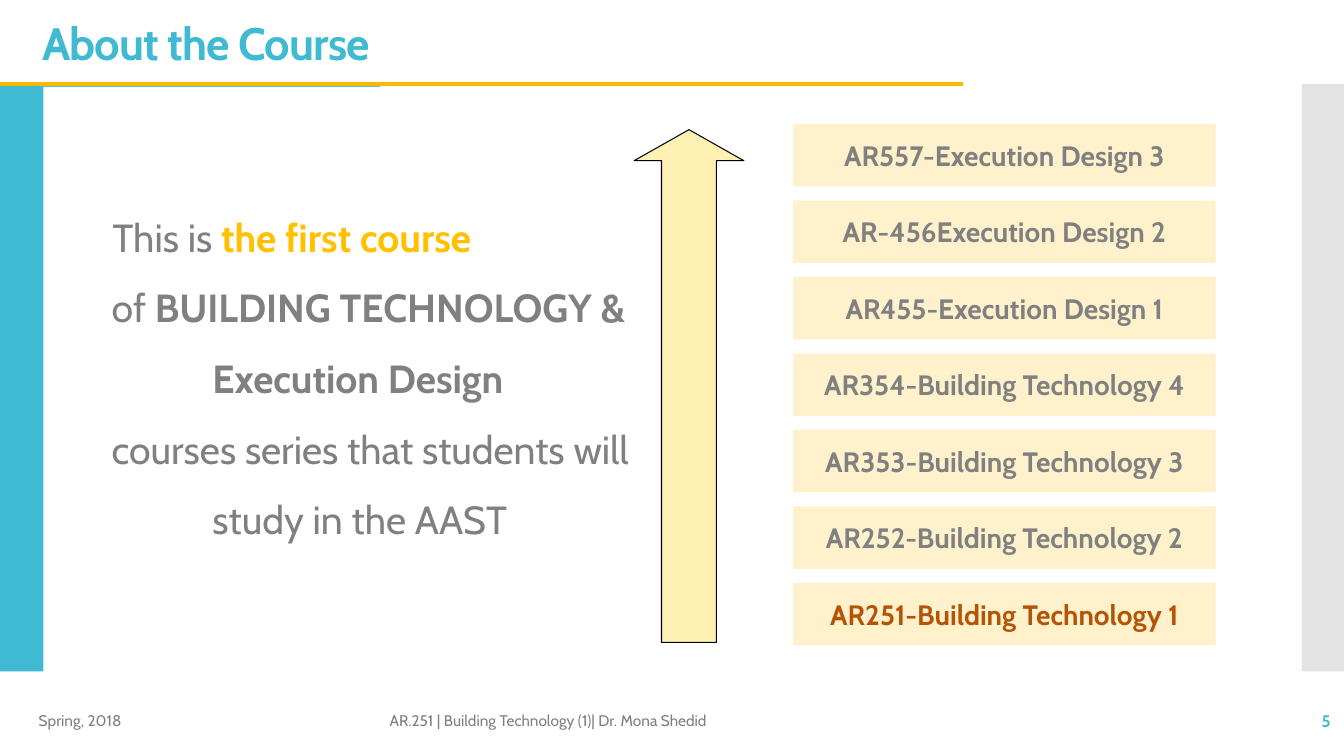
import pptx
import pptx.util
import pptx.dml.color
import pptx.enum.shapes
import pptx.enum.text
import pptx.oxml
import pptx.oxml.ns

Pt = pptx.util.Pt
Shape = pptx.enum.shapes.MSO_SHAPE
Align = pptx.enum.text.PP_ALIGN
Anchor = pptx.enum.text.MSO_ANCHOR
qn = pptx.oxml.ns.qn

TEAL, GOLD, GREY, WHITE = "40BAD2", "FAB900", "808080", "FFFFFF"
AMBER, CREAM, RUST = "FFC000", "FFF1CB", "B35406"


def color(code):
    return pptx.dml.color.RGBColor.from_string(code)


def child(node, tag, **attrs):
    item = pptx.oxml.parse_xml(
        '<a:%s xmlns:a="http://schemas.openxmlformats.org/drawingml/2006/main"/>' % tag)
    for key, value in attrs.items():
        item.set(key, value)
    node.append(item)


class Board:
    def __init__(self, slide, font):
        self.slide = slide
        self.font = font

    def run(self, para, text, size, ink, bold=False):
        run = para.add_run()
        run.text = text
        run.font.name = self.font
        run.font.size = Pt(size)
        run.font.bold = bold
        run.font.color.rgb = color(ink)
        return run

    def title(self, box, text, size, ink):
        shape = self.slide.shapes.title
        shape.left, shape.top, shape.width, shape.height = map(Pt, box)
        frame = shape.text_frame
        frame.vertical_anchor = Anchor.MIDDLE
        para = frame.paragraphs[0]
        para.alignment = Align.LEFT
        para.line_spacing = 0.9
        run = self.run(para, text, size, ink, True)
        run.font._element.set("spc", "-60")

    def shape(self, kind, box, fill, line=None, alpha=None):
        shape = self.slide.shapes.add_shape(kind, *map(Pt, box))
        shape.shadow.inherit = False
        shape.fill.solid()
        shape.fill.fore_color.rgb = color(fill)
        if alpha:
            tint = shape._element.spPr.find(qn("a:solidFill"))[0]
            child(tint, "alpha", val=str(alpha * 1000))
        if line:
            shape.line.color.rgb = color(line)
            shape.line.width = Pt(0.75)
        else:
            shape.line.fill.background()
        return shape

    def label(self, box, text, size, ink, bold=False, fill=CREAM):
        shape = self.shape(Shape.RECTANGLE, box, fill)
        frame = shape.text_frame
        frame.vertical_anchor = Anchor.MIDDLE
        para = frame.paragraphs[0]
        para.alignment = Align.CENTER
        self.run(para, text, size, ink, bold)

    def rule(self, start, end, ink, width):
        line = self.slide.shapes.add_connector(
            pptx.enum.shapes.MSO_CONNECTOR.STRAIGHT, *map(Pt, start + end))
        line.line.color.rgb = color(ink)
        line.line.width = Pt(width)
        child(line._element.spPr, "effectLst")

    def text(self, box, paras, size, align=Align.LEFT, anchor=Anchor.MIDDLE,
             space=None):
        """Each paragraph is (left margin, first indent, runs)."""
        frame = self.slide.shapes.add_textbox(*map(Pt, box)).text_frame
        frame.word_wrap = True
        frame.vertical_anchor = anchor
        for index, (left, first, runs) in enumerate(paras):
            para = frame.add_paragraph() if index else frame.paragraphs[0]
            para.alignment = align
            if space:
                para.line_spacing = space
            if left:
                props = para._p.get_or_add_pPr()
                props.set("marL", str(Pt(left)))
                props.set("indent", str(Pt(first)))
            for words, ink, bold in runs:
                self.run(para, words, size, ink, bold)


def main():
    deck = pptx.Presentation()
    deck.slide_width, deck.slide_height = Pt(960), Pt(540)
    board = Board(deck.slides.add_slide(deck.slide_layouts[5]), "Cabin")

    # Side bands and header rule
    board.shape(Shape.RECTANGLE, (0, 60, 271.5, 419.5), TEAL)
    board.shape(Shape.RECTANGLE, (930, 60, 30, 419.5), "C8C8C8", alpha=50)
    board.rule((0, 60), (688, 60), GOLD, 3)
    board.shape(Shape.RECTANGLE, (31, 62, 260.5, 420), WHITE)

    # Title
    board.title((23, 12.2, 318, 41), "About the Course", 32.4, TEAL)

    # Footer
    foot, tall = 500.4, 28.8
    board.text((837.5, foot, 120, tall), [(0, 0, [("5", TEAL, True)])], 12,
               Align.RIGHT)
    for left, width, words in (
            (20.6, 216, "Spring, 2018"),
            (271.2, 543.6, "AR.251 | Building Technology (1)| Dr. Mona Shedid")):
        board.text((left, foot, width, tall), [(0, 0, [(words, GREY, False)])], 11)

    # Statement
    board.text((50.4, 131.8, 407.5, 262), [
        (58.3, -35.3, [("This is ", GREY, False),
                       ("the first course", AMBER, True)]),
        (94.3, -72, [("of ", GREY, False),
                     ("BUILDING TECHNOLOGY & Execution Design", GREY, True)]),
        (94.3, -72, [("courses series that students will study in the AAST",
                      GREY, False)]),
    ], 28, anchor=Anchor.TOP, space=1.5)

    # Upward arrow
    arrow = board.shape(Shape.UP_ARROW, (452.9, 92.6, 78.5, 366.2), "FFF1B3",
                        "000000")
    arrow.adjustments[0] = 0.5
    arrow.adjustments[1] = 0.283

    # Course ladder, first course at the bottom
    ladder = ("AR251-Building Technology 1", "AR252-Building Technology 2",
              "AR353-Building Technology 3", "AR354-Building Technology 4",
              "AR455-Execution Design 1", "AR-456Execution Design 2",
              "AR557-Execution Design 3")
    for step, course in enumerate(ladder):
        board.label((566.6, 416.4 - step * 54.63, 301.7, 44.6), course, 20,
                    GREY if step else RUST, True)

    deck.save("out.pptx")


if __name__ == "__main__":
    main()
